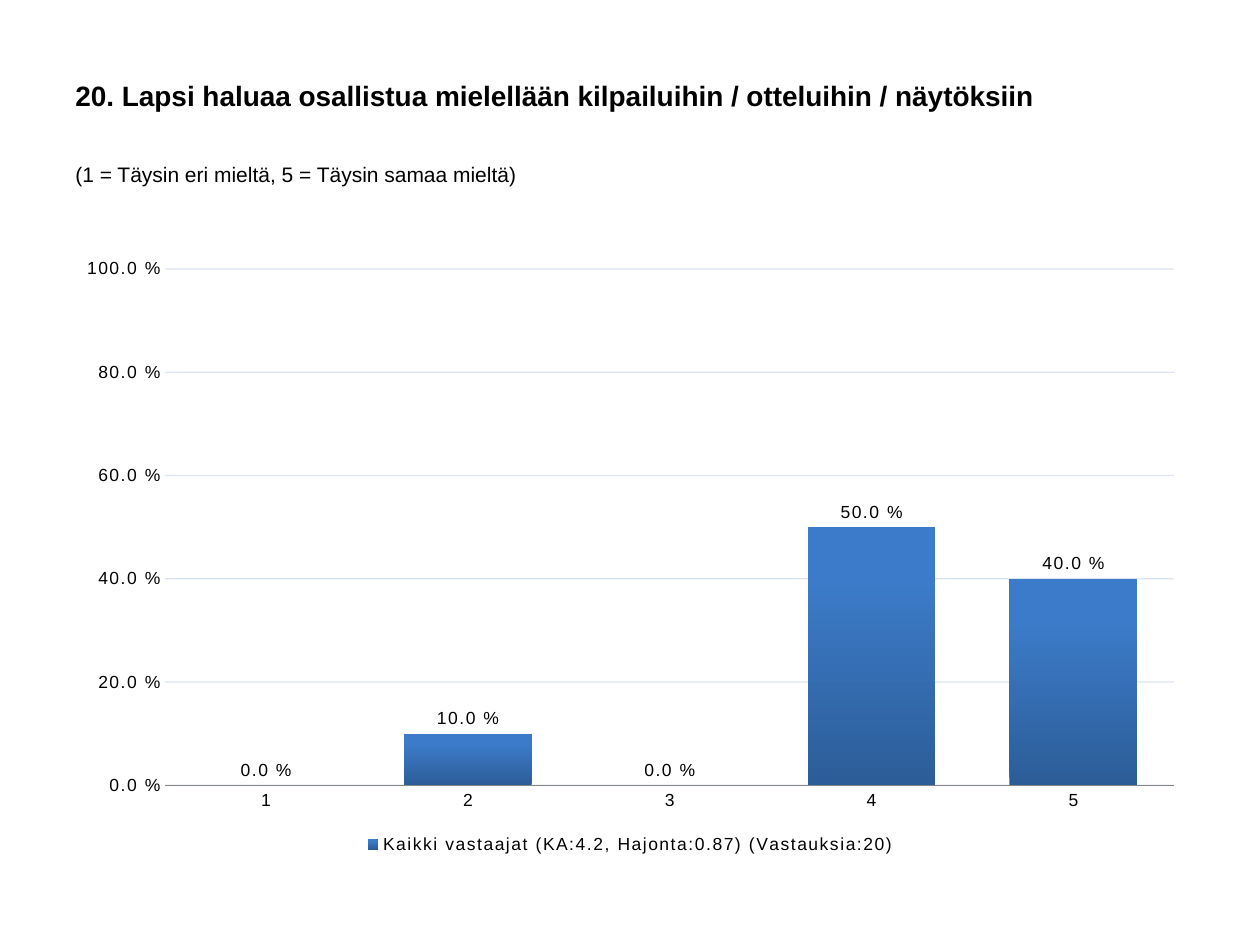
from dataclasses import dataclass

from lxml import etree
from pptx import Presentation
from pptx.chart.data import CategoryChartData
from pptx.dml.color import RGBColor
from pptx.enum import chart as ch, text
from pptx.oxml import parse_xml
from pptx.oxml.ns import nsdecls, qn
from pptx.util import Inches, Pt


@dataclass(frozen=True)
class Theme:
    """Colours, font and type sizes of the slide."""
    font: str = "Arial"
    ink: RGBColor = RGBColor(0, 0, 0)
    grid: RGBColor = RGBColor(0x4F, 0x81, 0xBD)
    axis: RGBColor = RGBColor(0x86, 0x86, 0x86)
    bar_low: RGBColor = RGBColor(0x2C, 0x5D, 0x98)
    bar_high: RGBColor = RGBColor(0x3C, 0x7B, 0xC9)
    title: Pt = Pt(16)
    body: Pt = Pt(12)
    label: Pt = Pt(10)


THEME = Theme()
PERCENT = "0.0\\ %"
PLOT = {"x": 0.09, "y": 0.04, "w": 0.89, "h": 0.84}


def set_font(font, size, bold=False):
    """Apply the theme font at the given size."""
    values = {"name": THEME.font, "size": size, "bold": bold}
    for name, value in values.items():
        setattr(font, name, value)
    font.color.rgb = THEME.ink


def add_text(s, box, words, size, bold=False, anchor=text.MSO_ANCHOR.TOP):
    """Place one line of text in the box."""
    tf = s.shapes.add_textbox(*box).text_frame
    tf.word_wrap = True
    tf.vertical_anchor = anchor
    p = tf.paragraphs[0]
    if not bold:
        p.space_before = Pt(2.4)
    r = p.add_run()
    r.text = words
    set_font(r.font, size, bold)


def place_plot(chart):
    """Fix the inner plot area as fractions of the chart."""
    area = chart.element.find(".//" + qn("c:plotArea"))
    for old in area.findall(qn("c:layout")):
        area.remove(old)
    modes = "".join(f'<c:{k}Mode val="edge"/>' for k in "xy")
    sizes = "".join(f'<c:{k} val="{v}"/>' for k, v in PLOT.items())
    area.insert(0, parse_xml(
        f'<c:layout {nsdecls("c")}><c:manualLayout>'
        f'<c:layoutTarget val="inner"/>{modes}{sizes}'
        '</c:manualLayout></c:layout>'))


def style_axes(chart):
    """Format both axes and the pale gridlines."""
    cat, val = chart.category_axis, chart.value_axis
    for axis in (cat, val):
        axis.major_tick_mark = axis.minor_tick_mark = ch.XL_TICK_MARK.NONE
        set_font(axis.tick_labels.font, THEME.label)
    cat.format.line.color.rgb = THEME.axis
    val.format.line.fill.background()
    scale = {"minimum_scale": 0, "maximum_scale": 1, "major_unit": 0.2,
             "has_major_gridlines": True}
    for name, value in scale.items():
        setattr(val, name, value)
    val.tick_labels.number_format = PERCENT
    val.tick_labels.number_format_is_linked = False
    line = val.major_gridlines.format.line
    line.width = Pt(0.75)
    line.color.rgb = THEME.grid
    colour = chart.element.find(
        f'.//{qn("c:majorGridlines")}//{qn("a:srgbClr")}')
    etree.SubElement(colour, qn("a:alpha")).set("val", "20000")


def style_bars(plot):
    """Format the gradient columns and their value labels."""
    plot.gap_width = 58
    plot.vary_by_categories = False
    fill = plot.series[0].format.fill
    fill.gradient()
    fill.gradient_angle = 90
    stops = ((0, THEME.bar_low), (0.8, THEME.bar_high))
    for stop, (position, colour) in zip(fill.gradient_stops, stops):
        stop.position = position
        stop.color.rgb = colour
    plot.has_data_labels = True
    values = {"show_value": True, "number_format": PERCENT,
              "number_format_is_linked": False,
              "position": ch.XL_LABEL_POSITION.OUTSIDE_END}
    for name, value in values.items():
        setattr(plot.data_labels, name, value)
    set_font(plot.data_labels.font, THEME.label)


def add_answers(s, box):
    """Chart the share of each answer in the box."""
    data = CategoryChartData(number_format=PERCENT)
    data.categories = ["1", "2", "3", "4", "5"]
    data.add_series("Kaikki vastaajat (KA:4.2, Hajonta:0.87) (Vastauksia:20)",
                    (0, 0.1, 0, 0.5, 0.4))
    chart = s.shapes.add_chart(
        ch.XL_CHART_TYPE.COLUMN_CLUSTERED, *box, data).chart
    chart.has_title = False
    set_font(chart.font, THEME.label)
    chart.has_legend = True
    chart.legend.position = ch.XL_LEGEND_POSITION.BOTTOM
    chart.legend.include_in_layout = False
    set_font(chart.legend.font, THEME.label)
    style_axes(chart)
    style_bars(chart.plots[0])
    place_plot(chart)
    for props in chart.element.iter(qn("a:defRPr")):
        props.set("spc", "100")


def main():
    """Build and save the survey slide."""
    prs = Presentation()
    prs.slide_width, prs.slide_height = Inches(10), Inches(7.5)
    s = prs.slides.add_slide(prs.slide_layouts[6])
    left, width = Inches(0.5), Inches(9)
    add_text(s, (left, Inches(0.36), width, Inches(0.79)),
             "20. Lapsi haluaa osallistua mielellään kilpailuihin / "
             "otteluihin / näytöksiin",
             THEME.title, True, text.MSO_ANCHOR.MIDDLE)
    add_text(s, (left, Inches(1.23), width, Inches(0.59)),
             "(1 = Täysin eri mieltä, 5 = Täysin samaa mieltä)", THEME.body)
    add_answers(s, (left, Inches(1.94), width, Inches(4.88)))
    prs.save("out.pptx")


if __name__ == "__main__":
    main()
